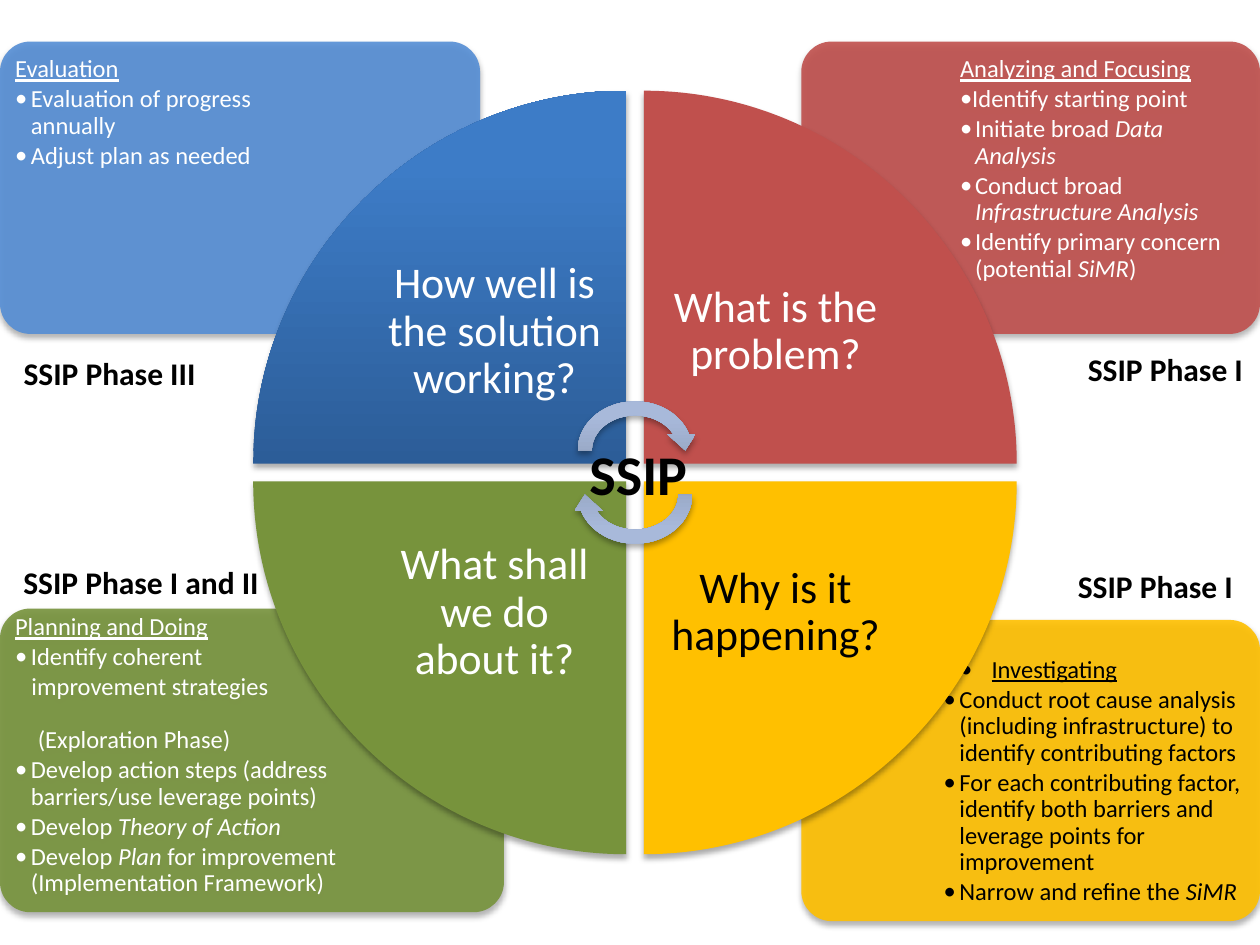
from lxml import etree
from pptx import Presentation
from pptx.dml.color import RGBColor
from pptx.enum.shapes import MSO_SHAPE
from pptx.enum.text import MSO_ANCHOR, PP_ALIGN
from pptx.oxml.ns import qn
from pptx.util import Inches, Pt

CIRCULAR_ARROW = MSO_SHAPE.CIRCULAR_ARROW
TOP, MIDDLE, BOTTOM = MSO_ANCHOR.TOP, MSO_ANCHOR.MIDDLE, MSO_ANCHOR.BOTTOM
LEFT, CENTER = PP_ALIGN.LEFT, PP_ALIGN.CENTER

COLORS = {
    "red": "C0504D", "yellow": "FFC000", "green": "77933C", "blue": "558ED5",
    "deep_blue": "2C5D98", "bright_blue": "3D7CC7",
    "arrow_dark": "818FA8", "arrow_light": "A8B9DA",
    "white": "FFFFFF", "black": "000000",
}
FONT = "Calibri"
RADIUS = 2.96
CORNER = 0.24
ARC_PULL = 0.55  # share of the way to the corner that bends a quarter arc

# Paragraph kinds: (left margin, first-line indent, bullet)
HEADING = (0, 0, False)
ITEM = (0.125, -0.125, True)
NEAR_HEADING = (0.12, 0.01, False)
NEAR_ITEM = (0.12, 0.01, True)
FAR_ITEM = (0.25, -0.12, True)
BULLET_HEADING = (0.38, -0.25, True)

# Panels: position, fill, text colour, anchor, insets (l, t, r, b), paragraphs.
# Text between asterisks is italic; the first paragraph is the heading.
PANELS = [
    ((6.36, 4.92, 3.64, 2.39), "yellow", "black", BOTTOM, (1.13, 0.67, 0.12, 0.12), [
        ("Investigating", BULLET_HEADING),
        ("Conduct root cause analysis (including infrastructure) to identify "
         "contributing factors", ITEM),
        ("For each contributing factor, identify both barriers and leverage "
         "points for improvement", ITEM),
        ("Narrow and refine the *SiMR*", ITEM)]),
    ((0, 4.83, 4, 2.41), "green", "white", BOTTOM, (0.12, 0.67, 1.13, 0.12), [
        ("Planning and Doing", HEADING),
        ("Identify coherent", ITEM),
        ("improvement strategies", (0.13, 0, False)),
        ("(Exploration Phase)", (0.18, 0, False), 13),
        ("Develop action steps (address barriers/use leverage points)", ITEM),
        ("Develop *Theory of Action*", ITEM),
        ("Develop *Plan *for improvement (Implementation Framework)", ITEM)]),
    ((6.36, 0.33, 3.64, 2.32), "red", "white", TOP, (1.13, 0.12, 0.12, 0.67), [
        ("Analyzing and Focusing", NEAR_HEADING),
        ("Identify starting point", NEAR_ITEM),
        ("Initiate broad *Data Analysis*", FAR_ITEM),
        ("Conduct broad *Infrastructure Analysis*", FAR_ITEM),
        ("Identify primary concern (potential *SiMR*)", FAR_ITEM)]),
    ((0, 0.33, 3.81, 2.32), "blue", "white", TOP, (0.12, 0.12, 1.13, 0.67), [
        ("Evaluation", HEADING),
        ("Evaluation of progress annually", ITEM),
        ("Adjust plan as needed", ITEM)]),
]

# Quadrants: inner corner, direction of the arc, fill, text colour, question
QUADRANTS = [
    ((4.97, 3.68), (-1, -1), ("deep_blue", "bright_blue"), "white",
     "How well is the solution working?"),
    ((5.11, 3.68), (1, -1), "red", "white", "What is the problem?"),
    ((5.11, 3.82), (1, 1), "yellow", "black", "Why is it happening?"),
    ((4.97, 3.82), (-1, 1), "green", "white", "What shall we do about it?"),
]

LABELS = [
    ((4.58, 3.44, 1, 0.64), "SSIP", 32, LEFT),
    ((8.5, 2.73, 1.5, 0.4), "SSIP Phase I", 18, CENTER),
    ((0.08, 4.42, 2.08, 0.4), "SSIP Phase I and II", 18, CENTER),
    ((0.08, 2.76, 1.58, 0.4), "SSIP Phase III", 18, CENTER),
    ((8.42, 4.45, 1.5, 0.4), "SSIP Phase I", 18, CENTER),
]


def color(name):
    return RGBColor.from_string(COLORS[name])


def add_element(parent, tag, **attributes):
    element = etree.SubElement(parent, qn(tag))
    for key, value in attributes.items():
        element.set(key, str(value))
    return element


def add_outline(slide, start, segments):
    """Closed outline of (end, corner) segments; a corner makes a quarter arc."""
    builder = slide.shapes.build_freeform(*map(Inches, start))
    builder.add_line_segments([tuple(map(Inches, end)) for end, _ in segments])
    shape = builder.convert_to_shape()
    lines = list(shape._element.iter(qn("a:lnTo")))
    previous = start
    for line, (end, corner) in zip(lines, segments):
        if corner:
            line.tag = qn("a:cubicBezTo")
            for index, point in enumerate((previous, end)):
                x, y = (Inches(p + ARC_PULL * (c - p)) for p, c in zip(point, corner))
                control = add_element(line, "a:pt", x=x - shape.left, y=y - shape.top)
                line.insert(index, control)
        previous = end
    return shape


def paint(shape, fill, opacity=None):
    """Fill with a colour or an upward gradient; no line, soft shadow."""
    if isinstance(fill, tuple):
        shape.fill.gradient()
        shape.fill.gradient_angle = 90
        for stop, name, position in zip(shape.fill.gradient_stops, fill, (0, 0.8)):
            stop.color.rgb = color(name)
            stop.position = position
    else:
        shape.fill.solid()
        shape.fill.fore_color.rgb = color(fill)
    properties = shape._element.spPr
    if opacity:
        solid = properties.find(qn("a:solidFill"))
        add_element(solid[0], "a:alpha", val=opacity * 1000)
    shape.line.fill.background()
    shape.shadow.inherit = False
    shadow = add_element(properties.find(qn("a:effectLst")), "a:outerShdw",
                         blurRad=Pt(3.5), dist=Pt(2.2), dir=5400000, rotWithShape=0)
    black = add_element(shadow, "a:srgbClr", val=COLORS["black"])
    add_element(black, "a:alpha", val=32000)


def set_frame(shape, anchor, insets):
    frame = shape.text_frame
    frame.word_wrap = True
    frame.vertical_anchor = anchor
    (frame.margin_left, frame.margin_top,
     frame.margin_right, frame.margin_bottom) = map(Inches, insets)
    return frame


def style_font(font, size, color_name):
    font.name = FONT
    font.size = Pt(size)
    font.color.rgb = color(color_name)


def write_paragraph(paragraph, text, layout, color_name, heading, space_before=0):
    margin, indent, bullet = layout
    paragraph.alignment = LEFT
    paragraph.line_spacing = 0.9
    paragraph.space_before = Pt(space_before)
    paragraph.space_after = Pt(2)
    properties = paragraph._p.get_or_add_pPr()
    properties.set("marL", str(Inches(margin)))
    properties.set("indent", str(Inches(indent)))
    if bullet:
        add_element(properties, "a:buFont", typeface=FONT)
        add_element(properties, "a:buChar", char="•")
    for index, part in enumerate(text.split("*")):
        if part:
            run = paragraph.add_run()
            run.text = part
            style_font(run.font, 14, color_name)
            run.font.italic = index % 2 == 1
            run.font.underline = heading


def add_panel(slide, box, fill, text_color, anchor, insets, paragraphs):
    x, y, width, height = box
    right, bottom = x + width, y + height
    shape = add_outline(slide, (x, y + CORNER), [
        ((x + CORNER, y), (x, y)), ((right - CORNER, y), None),
        ((right, y + CORNER), (right, y)), ((right, bottom - CORNER), None),
        ((right - CORNER, bottom), (right, bottom)), ((x + CORNER, bottom), None),
        ((x, bottom - CORNER), (x, bottom))])
    paint(shape, fill, opacity=90)
    frame = set_frame(shape, anchor, insets)
    for index, (text, layout, *space) in enumerate(paragraphs):
        paragraph = frame.add_paragraph() if index else frame.paragraphs[0]
        write_paragraph(paragraph, text, layout, text_color, index == 0, *space)


def add_quadrant(slide, inner, direction, fill, text_color, question):
    (x, y), (across, down) = inner, direction
    far_x, far_y = x + across * RADIUS, y + down * RADIUS
    shape = add_outline(slide, (far_x, y), [
        ((x, far_y), (far_x, far_y)), (inner, None)])
    paint(shape, fill)
    left, right = (1.06, 0.19) if across < 0 else (0.19, 1.06)
    top, bottom = (1.06, 0.19) if down < 0 else (0.19, 1.06)
    frame = set_frame(shape, MIDDLE, (left, top, right, bottom))
    frame.text = question
    paragraph = frame.paragraphs[0]
    paragraph.alignment = CENTER
    paragraph.line_spacing = 0.9
    style_font(paragraph.runs[0].font, 25, text_color)


def add_cycle_arrow(slide, top, rotation):
    shape = slide.shapes.add_shape(CIRCULAR_ARROW, Inches(4.53), Inches(top),
                                   Inches(1.02), Inches(0.89))
    shape.rotation = rotation
    paint(shape, ("arrow_dark", "arrow_light"))


def add_label(slide, box, text, size, alignment):
    frame = slide.shapes.add_textbox(*map(Inches, box)).text_frame
    frame.word_wrap = True
    frame.text = text
    paragraph = frame.paragraphs[0]
    paragraph.alignment = alignment
    style_font(paragraph.runs[0].font, size, "black")
    paragraph.runs[0].font.bold = True


def main():
    presentation = Presentation()
    presentation.slide_width, presentation.slide_height = Inches(10), Inches(7.5)
    slide = presentation.slides.add_slide(presentation.slide_layouts[6])
    for panel in PANELS:
        add_panel(slide, *panel)
    for quadrant in QUADRANTS:
        add_quadrant(slide, *quadrant)
    for top, rotation in ((3.13, 0), (3.48, 180)):
        add_cycle_arrow(slide, top, rotation)
    for label in LABELS:
        add_label(slide, *label)
    presentation.save("out.pptx")


if __name__ == "__main__":
    main()
